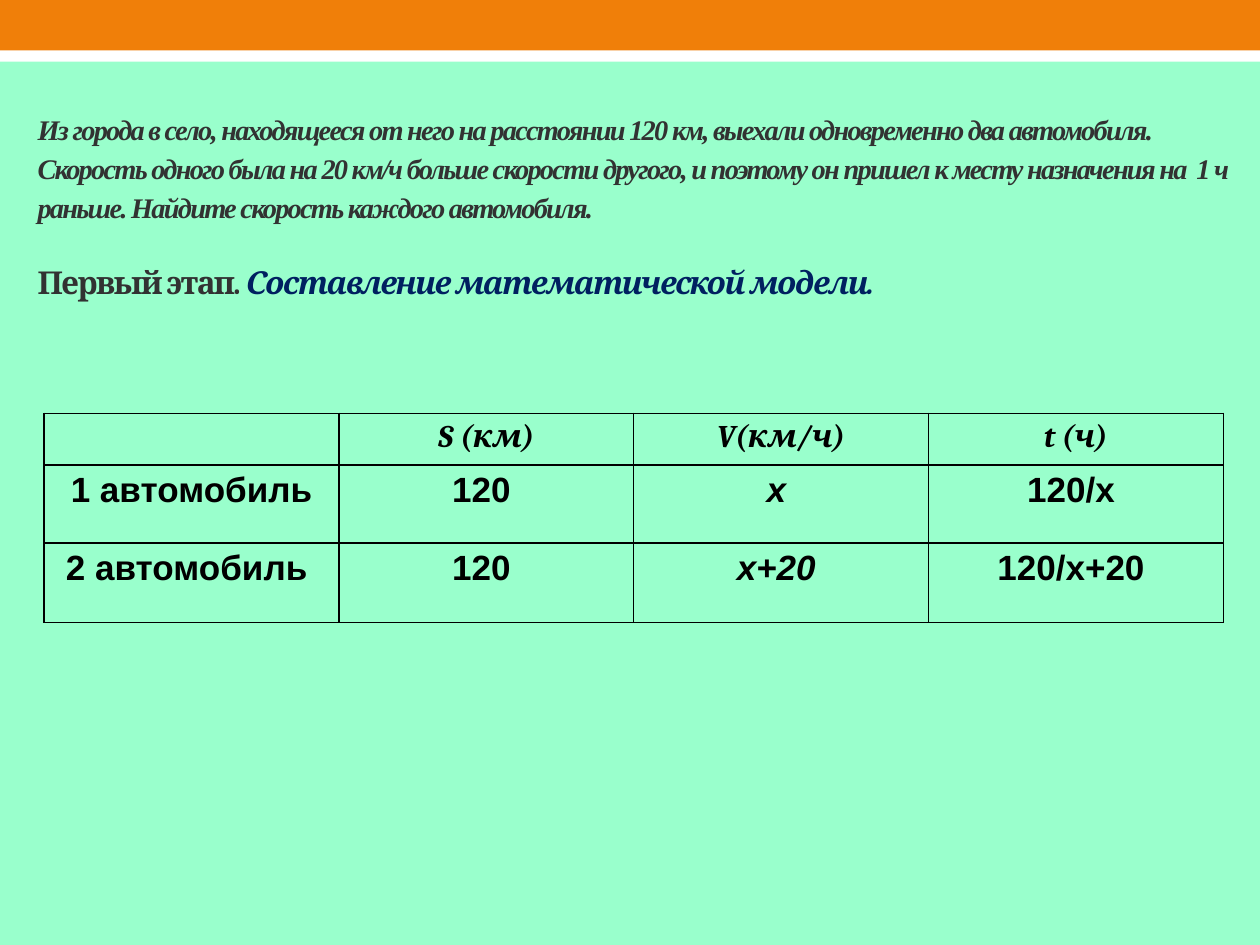
"""Build a slide that models a motion problem about two cars."""
from dataclasses import dataclass

from lxml import etree
from pptx import Presentation
from pptx import util as u
from pptx.dml.color import RGBColor
from pptx.enum import shapes, text
from pptx.oxml.ns import qn

MINT = RGBColor(0x99, 0xFF, 0xCC)
WHITE = RGBColor(0xFF, 0xFF, 0xFF)
ORANGE = RGBColor(0xF0, 0x7F, 0x09)
GRAY = RGBColor(0x32, 0x32, 0x32)
NAVY = RGBColor(0x00, 0x20, 0x60)
BLACK = RGBColor(0x00, 0x00, 0x00)


@dataclass(frozen=True)
class Band:
    top: float
    height: float
    color: RGBColor


@dataclass(frozen=True)
class Span:
    words: str
    color: RGBColor
    italic: bool


@dataclass(frozen=True)
class Passage:
    font: str
    size: float
    space_after: float
    spans: tuple[Span, ...]


@dataclass(frozen=True)
class Row:
    height: float
    font: str
    size: float
    cells: tuple[str, ...]
    italic_columns: tuple[int, ...]


BANDS = (Band(0.24, 0.25, WHITE), Band(0, 0.4, ORANGE))
PASSAGES = (
    Passage("Times New Roman", 16.2, 19, (
        Span("Из города в село, находящееся от него на расстоянии 120 км, "
             "выехали одновременно два автомобиля. Скорость одного была на "
             "20 км/ч больше скорости другого, и поэтому он пришел к месту "
             "назначения на  1 ч раньше. Найдите скорость каждого автомобиля.",
             GRAY, True),
    )),
    Passage("Cambria", 18, 0, (
        Span("Первый этап. ", GRAY, False),
        Span("Составление математической модели.", NAVY, True),
    )),
)
ROWS = (
    Row(0.41, "Cambria", 18, ("", "S (км)", "V(км/ч)", "t (ч)"), (1, 2, 3)),
    Row(0.62, "Arial", 20, ("1 автомобиль", "120 ", "x ", "120/x "), (2,)),
    Row(0.63, "Arial", 20, ("2 автомобиль ", "120 ", "x+20 ", "120/x+20 "), (2,)),
)
COLUMN_WIDTH = 2.34


def draw_band(page, band: Band, width: int) -> None:
    """Draw one full-width band."""
    box = page.shapes.add_shape(shapes.MSO_SHAPE.RECTANGLE, 0, u.Inches(band.top),
                                width, u.Inches(band.height))
    box.shadow.inherit = False
    box.fill.solid()
    box.fill.fore_color.rgb = band.color
    box.line.fill.background()


def draw_problem(page, passages: tuple[Passage, ...]) -> None:
    """Write the problem statement and the stage heading."""
    box = page.shapes.add_textbox(u.Inches(0.2), u.Inches(1.07),
                                  u.Inches(9.8), u.Inches(1.34))
    frame = box.text_frame
    frame.word_wrap = True
    frame.vertical_anchor = text.MSO_ANCHOR.MIDDLE
    frame.margin_bottom = u.Inches(0.29)
    for index, passage in enumerate(passages):
        para = frame.add_paragraph() if index else frame.paragraphs[0]
        para.line_spacing = 1.15
        para.space_after = u.Pt(passage.space_after)
        para.font.name = passage.font
        para.font.size = u.Pt(passage.size)
        para.font.bold = True
        for span in passage.spans:
            run = para.add_run()
            run.text = span.words
            run.font.color.rgb = span.color
            run.font.italic = span.italic
            run.font._element.set("spc", "-100")


def add_borders(cell) -> None:
    """Give a cell thin black lines on all four sides."""
    properties = cell._tc.get_or_add_tcPr()
    for index, side in enumerate(("a:lnL", "a:lnR", "a:lnT", "a:lnB")):
        line = etree.Element(qn(side), w=str(u.Pt(1)))
        fill = etree.SubElement(line, qn("a:solidFill"))
        etree.SubElement(fill, qn("a:srgbClr"), val=str(BLACK))
        properties.insert(index, line)


def draw_table(page, rows: tuple[Row, ...]) -> None:
    """Draw the table of distance, speed and time."""
    count = len(rows[0].cells)
    height = sum(row.height for row in rows)
    table = page.shapes.add_table(len(rows), count, u.Inches(0.35), u.Inches(3.28),
                                  u.Inches(COLUMN_WIDTH * count),
                                  u.Inches(height)).table
    table.first_row = table.horz_banding = False
    for column in table.columns:
        column.width = u.Inches(COLUMN_WIDTH)
    for row_index, row in enumerate(rows):
        table.rows[row_index].height = u.Inches(row.height)
        for column_index, words in enumerate(row.cells):
            cell = table.cell(row_index, column_index)
            cell.fill.background()
            add_borders(cell)
            cell.text = words
            para = cell.text_frame.paragraphs[0]
            para.alignment = text.PP_ALIGN.CENTER
            para.font.name = row.font
            para.font.size = u.Pt(row.size)
            para.font.bold = True
            para.font.italic = column_index in row.italic_columns
            para.font.color.rgb = BLACK


def main() -> None:
    """Build and save the deck."""
    deck = Presentation()
    deck.slide_width, deck.slide_height = u.Inches(10), u.Inches(7.5)
    page = deck.slides.add_slide(deck.slide_layouts[6])
    page.background.fill.solid()
    page.background.fill.fore_color.rgb = MINT
    for band in BANDS:
        draw_band(page, band, deck.slide_width)
    draw_problem(page, PASSAGES)
    draw_table(page, ROWS)
    deck.save("out.pptx")


if __name__ == "__main__":
    main()
